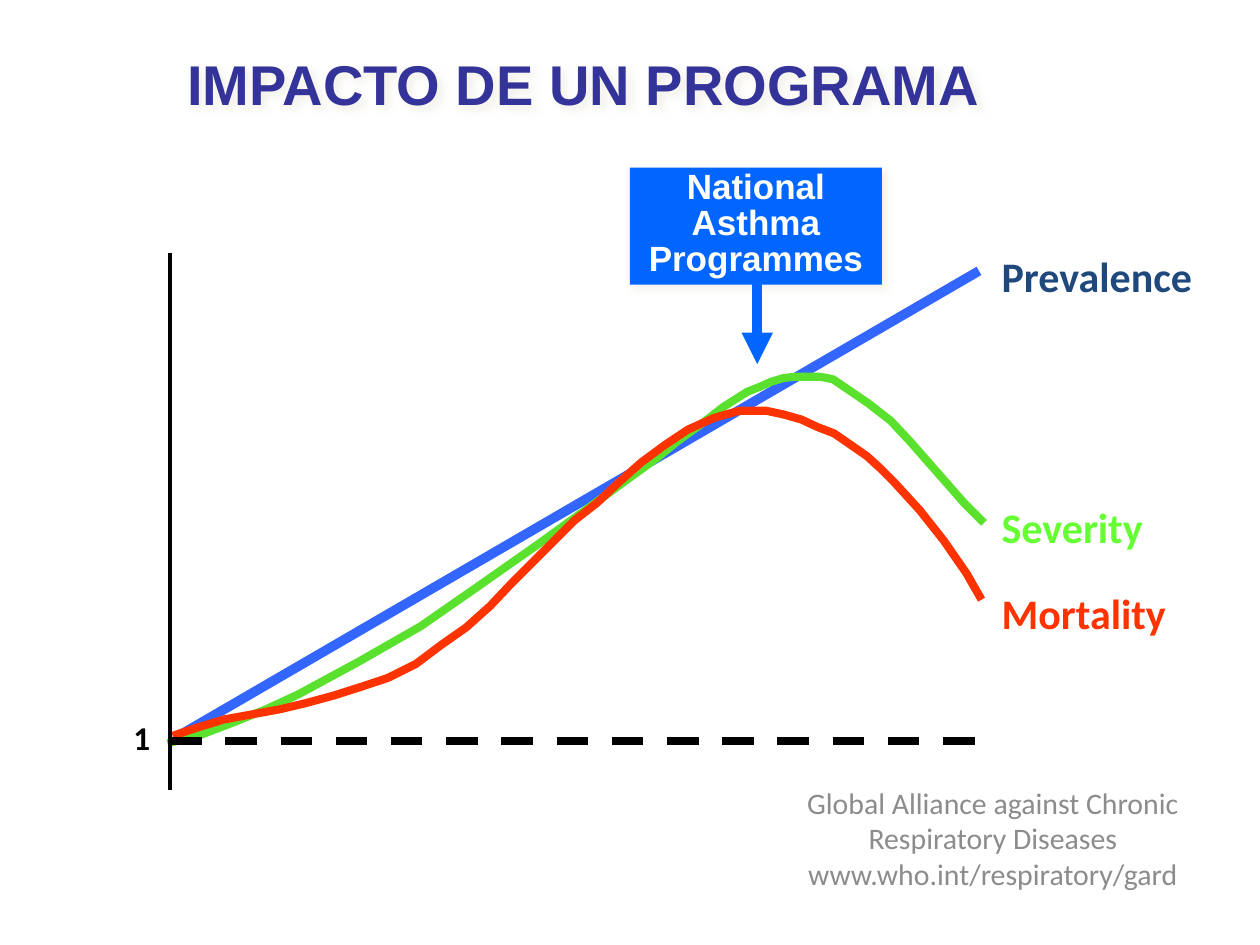
from dataclasses import dataclass

import pptx
import pptx.dml.color
import pptx.enum.dml
import pptx.enum.shapes
import pptx.enum.text
import pptx.oxml
import pptx.oxml.ns
import pptx.util
from lxml import etree

COLUMNS, ROWS = 10, 7.5
CELL = pptx.util.Inches(1)
COLORS = {
    "title": "333399", "source": "8C8C8C", "axis": "000000", "white": "FFFFFF",
    "program": "0066FF", "shadow": "EEECE1",
    "prevalence_line": "3366FF", "prevalence": "1F497D",
    "severity_line": "5AE12D", "severity": "66FF33", "mortality": "FF3300",
}
CENTER = pptx.enum.text.PP_ALIGN.CENTER
LEFT = pptx.enum.text.PP_ALIGN.LEFT
TOP = pptx.enum.text.MSO_ANCHOR.TOP
MIDDLE = pptx.enum.text.MSO_ANCHOR.MIDDLE
NARROW = (0.07, 0.03)
Point = tuple[float, float]


@dataclass(frozen=True)
class Caption:
    """Text in a frame of (left, top, width, height) grid cells."""
    lines: tuple[str, ...]
    frame: tuple[float, float, float, float]
    size: float
    color: str
    font: str = "Calibri"
    bold: bool = True
    align: pptx.enum.text.PP_ALIGN = LEFT
    anchor: pptx.enum.text.MSO_ANCHOR = TOP
    insets: tuple[float, float] = (0, 0)
    wrap: bool = False
    spacing: float = 1.0
    fill: str = ""
    shadowed: bool = False


@dataclass(frozen=True)
class Line:
    start: Point
    end: Point
    color: str
    width: float
    dashed: bool = False
    arrow: bool = False


@dataclass(frozen=True)
class Curve:
    points: tuple[Point, ...]
    color: str
    width: float = 4.63


def series_label(name: str, top: float, width: float, color: str) -> Caption:
    return Caption((name,), (7.95, top, width, 0.4), 24, color)


SOURCE = Caption(
    ("Global Alliance against Chronic Respiratory Diseases", "www.who.int/respiratory/gard"),
    (5.92, 6.11, 3.92, 1.08), 17, "source", bold=False, align=CENTER,
    anchor=MIDDLE, insets=(0.1, 0.05), wrap=True)
TITLE = Caption(
    ("IMPACTO DE UN PROGRAMA",), (1.17, 0.33, 6.92, 0.75), 32, "title", "Arial",
    align=CENTER, insets=(0.1, 0.06), wrap=True, shadowed=True)
PROGRAM = Caption(
    ("National Asthma", "Programmes"), (5, 1.33, 2, 0.93), 20, "white", "Arial",
    align=CENTER, insets=NARROW, wrap=True, spacing=0.85, fill="program", shadowed=True)
BASELINE_VALUE = Caption(
    ("1",), (0.98, 5.71, 0.29, 0.33), 19, "axis", align=CENTER,
    insets=NARROW, spacing=0.85)
SERIES_LABELS = (
    series_label("Prevalence", 1.99, 1.76, "prevalence"),
    series_label("Severity", 3.98, 1.3, "severity"),
    series_label("Mortality", 4.66, 1.39, "mortality"),
)

PREVALENCE = Line((1.4, 5.85), (7.77, 2.15), "prevalence_line", 5.5)
BASELINE = Line((1.35, 5.88), (7.78, 5.88), "axis", 4.5, dashed=True)
VERTICAL_AXIS = Line((1.35, 6.27), (1.35, 2.01), "axis", 2)
PROGRAM_ARROW = Line((6.01, 2.25), (6.01, 2.89), "program", 6, arrow=True)

SEVERITY = Curve((
    (1.33, 5.9), (1.6, 5.83), (1.86, 5.73), (2.11, 5.63), (2.37, 5.51), (2.85, 5.25),
    (3.34, 4.97), (3.8, 4.65), (4.27, 4.32), (4.74, 3.98), (5.22, 3.63), (5.38, 3.5),
    (5.56, 3.37), (5.74, 3.23), (5.93, 3.11), (6.03, 3.07), (6.12, 3.03), (6.22, 3),
    (6.31, 2.99), (6.41, 2.99), (6.51, 2.99), (6.61, 3.01), (6.7, 3.07), (6.89, 3.2),
    (7.07, 3.34), (7.22, 3.5), (7.36, 3.66), (7.51, 3.83), (7.65, 3.99), (7.81, 4.15),
), "severity_line")
MORTALITY = Curve((
    (1.37, 5.84), (1.58, 5.77), (1.78, 5.71), (2, 5.67), (2.22, 5.63), (2.43, 5.58),
    (2.65, 5.52), (2.87, 5.45), (3.08, 5.38), (3.3, 5.27), (3.5, 5.12), (3.7, 4.98),
    (3.89, 4.81), (4.05, 4.64), (4.23, 4.46), (4.4, 4.29), (4.56, 4.13), (4.74, 3.99),
    (4.91, 3.83), (5.09, 3.67), (5.28, 3.53), (5.46, 3.41), (5.66, 3.32), (5.76, 3.29),
    (5.87, 3.26), (5.97, 3.26), (6.08, 3.26), (6.22, 3.29), (6.36, 3.33), (6.49, 3.39),
    (6.62, 3.44), (6.75, 3.53), (6.88, 3.62), (6.99, 3.72), (7.09, 3.82), (7.3, 4.05),
    (7.49, 4.29), (7.67, 4.55), (7.79, 4.76),
), "mortality")


def cells(*counts: float) -> list[int]:
    return [round(count * CELL) for count in counts]


def rgb(name: str) -> pptx.dml.color.RGBColor:
    return pptx.dml.color.RGBColor.from_string(COLORS[name])


def add_child(parent: etree.ElementBase, tag: str, **attributes: str) -> etree.ElementBase:
    child = etree.SubElement(parent, pptx.oxml.ns.qn(tag))
    for key, value in attributes.items():
        child.set(key, value)
    return child


def style_stroke(stroke: pptx.dml.line.LineFormat, color: str, width: float) -> None:
    stroke.color.rgb = rgb(color)
    stroke.width = pptx.util.Pt(width)


def cast_shadow(shape: pptx.shapes.autoshape.Shape) -> None:
    """Add a soft shadow to the lower right of the shape."""
    shape.shadow.inherit = False
    effects = shape.element.spPr.find(pptx.oxml.ns.qn("a:effectLst"))
    shadow = add_child(effects, "a:outerShdw", blurRad=str(pptx.util.Pt(5)),
                       dist=str(pptx.util.Pt(3)), dir="2700000", rotWithShape="0")
    tint = add_child(shadow, "a:srgbClr", val=COLORS["shadow"])
    add_child(tint, "a:alpha", val="75000")


def draw_caption(slide: pptx.slide.Slide, caption: Caption) -> None:
    frame = cells(*caption.frame)
    if caption.fill:
        box = slide.shapes.add_shape(pptx.enum.shapes.MSO_SHAPE.RECTANGLE, *frame)
        box.fill.solid()
        box.fill.fore_color.rgb = rgb(caption.fill)
        box.line.fill.background()
    else:
        box = slide.shapes.add_textbox(*frame)
    if caption.shadowed:
        cast_shadow(box)
    body = box.text_frame
    body.word_wrap = caption.wrap
    body.vertical_anchor = caption.anchor
    side, edge = cells(*caption.insets)
    body.margin_left = body.margin_right = side
    body.margin_top = body.margin_bottom = edge
    body.text = "\n".join(caption.lines)
    for paragraph in body.paragraphs:
        paragraph.alignment = caption.align
        paragraph.line_spacing = caption.spacing
        paragraph.font.name = caption.font
        paragraph.font.size = pptx.util.Pt(caption.size)
        paragraph.font.bold = caption.bold
        paragraph.font.color.rgb = rgb(caption.color)


def draw_line(slide: pptx.slide.Slide, line: Line) -> None:
    connector = slide.shapes.add_connector(
        pptx.enum.shapes.MSO_CONNECTOR.STRAIGHT, *cells(*line.start, *line.end))
    style_stroke(connector.line, line.color, line.width)
    if line.dashed:
        connector.line.dash_style = pptx.enum.dml.MSO_LINE.DASH
    if line.arrow:
        stroke = connector.element.spPr.find(pptx.oxml.ns.qn("a:ln"))
        add_child(stroke, "a:tailEnd", type="triangle")
    add_child(connector.element.spPr, "a:effectLst")


def draw_curve(slide: pptx.slide.Slide, curve: Curve) -> None:
    start, *rest = [cells(*point) for point in curve.points]
    builder = slide.shapes.build_freeform(*start)
    builder.add_line_segments(rest, close=False)
    outline = builder.convert_to_shape()
    outline.fill.background()
    outline.shadow.inherit = False
    style_stroke(outline.line, curve.color, curve.width)


def main() -> None:
    deck = pptx.Presentation()
    deck.slide_width, deck.slide_height = cells(COLUMNS, ROWS)
    slide = deck.slides.add_slide(deck.slide_layouts[6])
    for caption in (SOURCE, TITLE):
        draw_caption(slide, caption)
    draw_line(slide, PREVALENCE)
    for curve in (SEVERITY, MORTALITY):
        draw_curve(slide, curve)
    for caption in (*SERIES_LABELS, PROGRAM, BASELINE_VALUE):
        draw_caption(slide, caption)
    for line in (BASELINE, VERTICAL_AXIS, PROGRAM_ARROW):
        draw_line(slide, line)
    deck.save("out.pptx")


if __name__ == "__main__":
    main()
